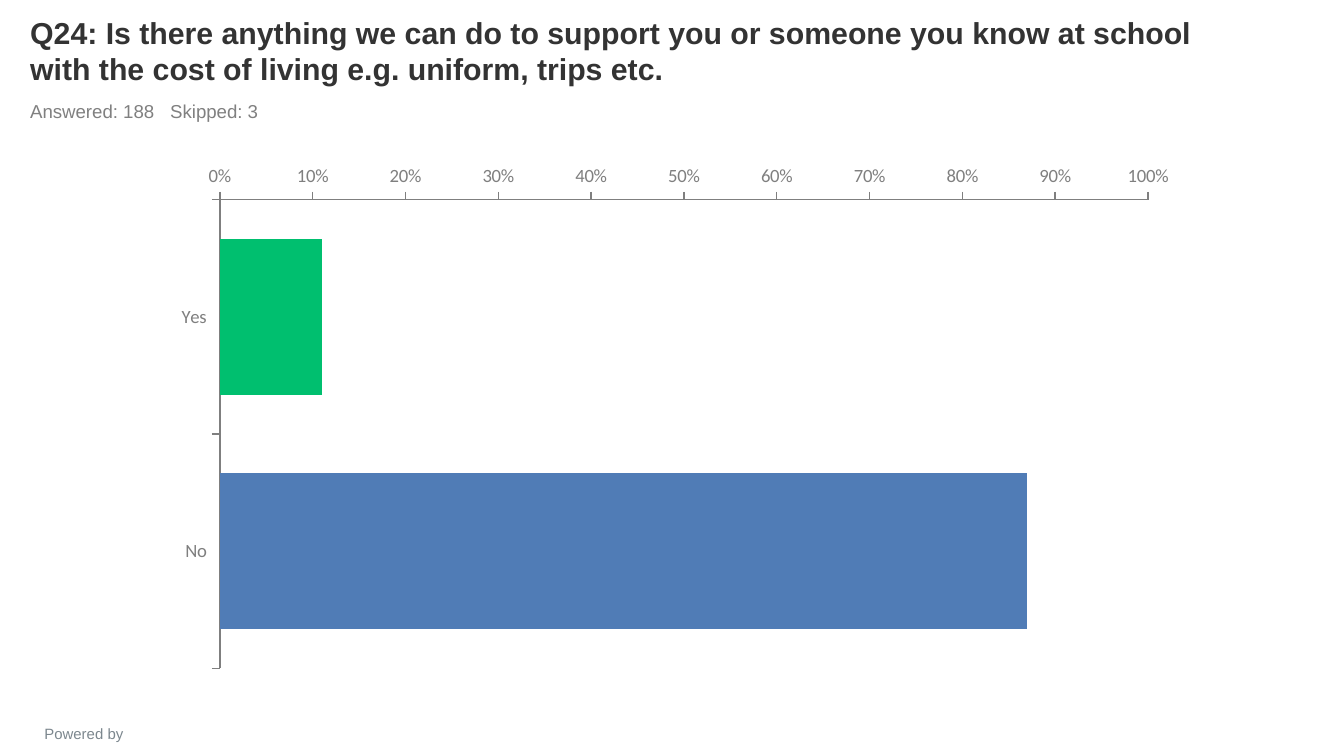
from lxml import etree
from pptx import Presentation
from pptx.chart.data import CategoryChartData
from pptx.dml.color import RGBColor
from pptx.enum.chart import (XL_AXIS_CROSSES, XL_CHART_TYPE,
                             XL_TICK_LABEL_POSITION, XL_TICK_MARK)
from pptx.enum.text import MSO_ANCHOR, PP_ALIGN
from pptx.oxml.ns import qn
from pptx.util import Emu, Pt

BAR = XL_CHART_TYPE.BAR_CLUSTERED
CROSS_AT_MAX = XL_AXIS_CROSSES.MAXIMUM
LABELS_LOW = XL_TICK_LABEL_POSITION.LOW
TICK_OUT, TICK_NONE = XL_TICK_MARK.OUTSIDE, XL_TICK_MARK.NONE
TOP, BOTTOM = MSO_ANCHOR.TOP, MSO_ANCHOR.BOTTOM
LEFT, CENTER = PP_ALIGN.LEFT, PP_ALIGN.CENTER

EMU_PER_PX = 914400 / 134.4
SLIDE_W, SLIDE_H = 1344, 756
INK, GREY, FOOTER_GREY = "333333", "808080", "7C878E"
AXIS_GREY = "7F7F7F"
ANSWERS = {"Yes": (0.11, "00BF6F"), "No": (0.87, "507CB6")}


def px(length):
    return Emu(round(length * EMU_PER_PX))


def rgb(hex_colour):
    return RGBColor.from_string(hex_colour)


def set_font(font, size, colour, name="Arial", bold=False):
    font.size, font.name, font.bold = Pt(size), name, bold
    font.color.rgb = rgb(colour)


def add_text(slide, box, text, size, colour, bold=False, align=LEFT,
             anchor=TOP, tab=None):
    frame = slide.shapes.add_textbox(*map(px, box)).text_frame
    frame.word_wrap = True
    frame.vertical_anchor = anchor
    paragraph = frame.paragraphs[0]
    paragraph.alignment = align
    if tab:
        tabs = etree.SubElement(paragraph._p.get_or_add_pPr(), qn("a:tabLst"))
        etree.SubElement(tabs, qn("a:tab"), pos=str(px(tab)), algn="l")
    run = paragraph.add_run()
    run.text = text
    set_font(run.font, size, colour, bold=bold)


def add_heading(slide, left, top, width):
    title_height = 81
    add_text(slide, (left, top, width, title_height),
             "Q24: Is there anything we can do to support you or someone you "
             "know at school with the cost of living e.g. uniform, trips etc.",
             size=16.2, colour=INK, bold=True, anchor=BOTTOM)
    add_text(slide, (left, top + title_height, width, 35),
             "Answered: 188\tSkipped: 3", size=10, colour=GREY, tab=140)


def style_axis(axis):
    axis.has_major_gridlines = False
    axis.major_tick_mark, axis.minor_tick_mark = TICK_OUT, TICK_NONE
    axis.format.line.color.rgb = rgb(AXIS_GREY)
    axis.format.line.width = Pt(0.75)
    set_font(axis.tick_labels.font, 10, AXIS_GREY, name="Calibri")


def add_answer_chart(slide, box):
    data = CategoryChartData(number_format="0%")
    data.categories = list(ANSWERS)
    data.add_series("Series 1", [share for share, _ in ANSWERS.values()])
    chart = slide.shapes.add_chart(BAR, *map(px, box), data).chart
    chart.has_title = chart.has_legend = False
    set_font(chart.font, 18, INK, name="Calibri")

    plot = chart.plots[0]
    plot.gap_width, plot.overlap = 50, 100
    plot.vary_by_categories = False
    series = plot.series[0]
    series.invert_if_negative = False
    for index, (_, colour) in enumerate(ANSWERS.values()):
        fill = series.points[index].format.fill
        fill.solid()
        fill.fore_color.rgb = rgb(colour)

    answers, shares = chart.category_axis, chart.value_axis
    for axis in (answers, shares):
        style_axis(axis)
    answers.reverse_order = True
    answers.crosses = CROSS_AT_MAX
    answers.tick_label_position = LABELS_LOW
    shares.minimum_scale, shares.maximum_scale = 0, 1
    shares.major_unit = 0.1
    shares.tick_labels.number_format = "0%"
    shares.tick_labels.number_format_is_linked = False


def add_footer(slide, box):
    add_text(slide, box, "Powered by", size=8, colour=FOOTER_GREY,
             align=CENTER)


def main():
    deck = Presentation()
    deck.slide_width, deck.slide_height = px(SLIDE_W), px(SLIDE_H)
    slide = deck.slides.add_slide(deck.slide_layouts[6])
    add_heading(slide, left=17, top=12, width=1210)
    add_answer_chart(slide, (161, 155, 1028, 524))
    add_footer(slide, (7, 718, 154, 24))
    deck.save("out.pptx")


if __name__ == "__main__":
    main()
